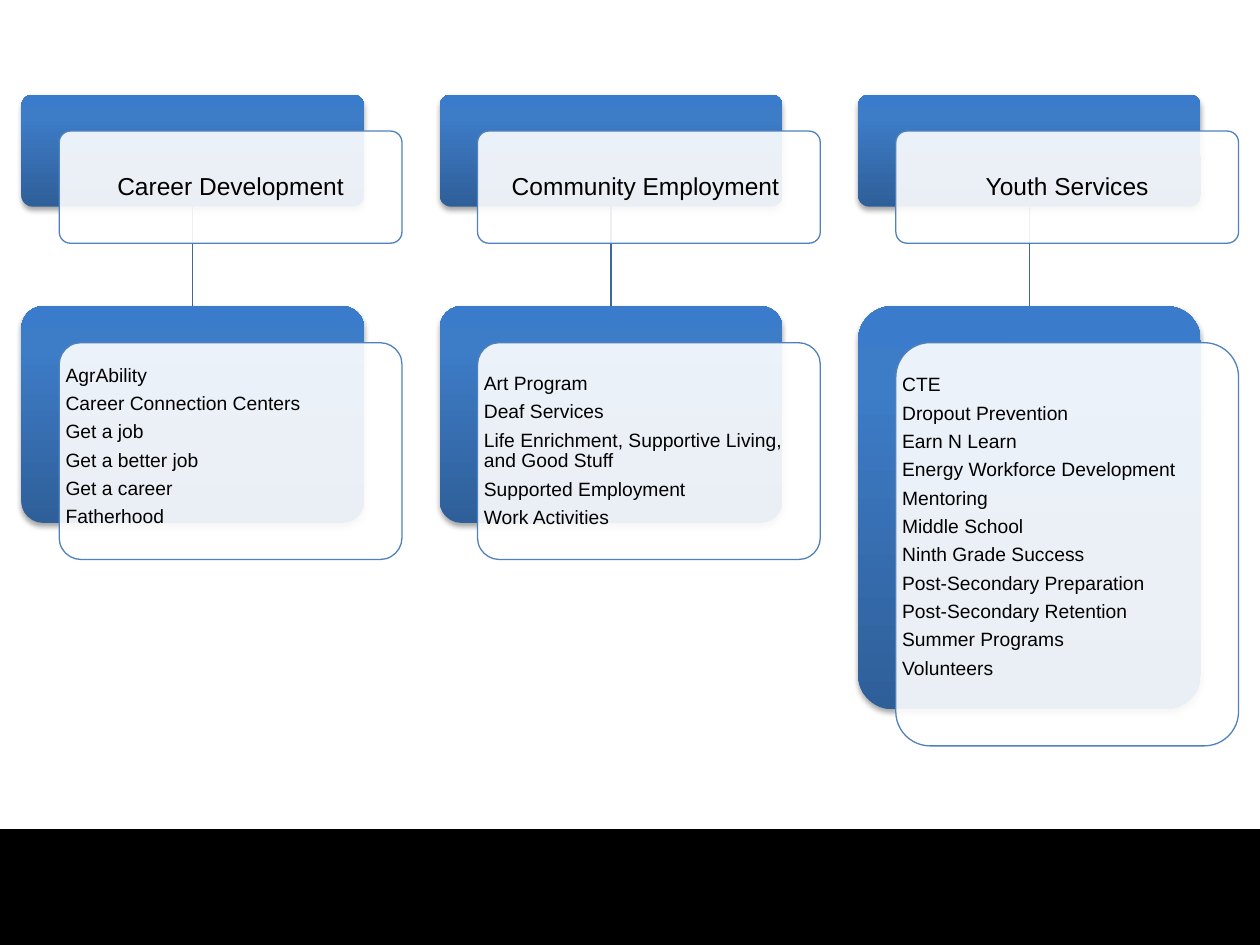
from lxml.etree import SubElement
from pptx import Presentation
from pptx.dml.color import RGBColor
from pptx.enum.shapes import MSO_CONNECTOR, MSO_SHAPE
from pptx.enum.text import MSO_ANCHOR, PP_ALIGN
from pptx.oxml import parse_xml
from pptx.oxml.ns import nsdecls, qn
from pptx.util import Inches, Pt

COLUMNS = [
    {"title": "Career Development", "height": 1.72, "lift": 0.07,
     "programs": ["AgrAbility", "Career Connection Centers", "Get a job",
                  "Get a better job", "Get a career", "Fatherhood"]},
    {"title": "Community Employment ", "height": 1.72, "lift": 0,
     "programs": ["Art Program", "Deaf Services",
                  "Life Enrichment, Supportive Living, and Good Stuff",
                  "Supported Employment", "Work Activities"]},
    {"title": "Youth Services", "height": 3.2, "lift": 0.27,
     "programs": ["CTE", "Dropout Prevention", "Earn N Learn",
                  "Energy Workforce Development", "Mentoring",
                  "Middle School", "Ninth Grade Success",
                  "Post-Secondary Preparation", "Post-Secondary Retention",
                  "Summer Programs", "Volunteers"]},
]
BLACK = RGBColor(0x00, 0x00, 0x00)
WHITE = RGBColor(0xFF, 0xFF, 0xFF)
OUTLINE = RGBColor(0x4F, 0x81, 0xBD)
LINK = RGBColor(0x3F, 0x67, 0x97)
GRADIENT = [(0, "2F5F99"), (80, "3D7CC7"), (100, "3A7CCB")]

LEFT, STEP, WIDTH = 0.17, 3.32, 2.72
TITLE_TOP, TITLE_HEIGHT, LIST_TOP = 0.75, 0.89, 2.43
SHIFT_X, SHIFT_Y = 0.3, 0.29
TITLE_STYLE = {"size": 14, "align": PP_ALIGN.CENTER, "inset": 0.06, "after": 0}
LIST_STYLE = {"size": 11, "align": PP_ALIGN.LEFT, "inset": 0.05, "after": 4.3}


def add_panel(page, kind, frame):
    panel = page.shapes.add_shape(kind, *map(Inches, frame))
    panel.shadow.inherit = False
    panel.line.fill.background()
    return panel


def add_back(page, frame):
    back = add_panel(page, MSO_SHAPE.ROUNDED_RECTANGLE, frame)
    back.adjustments[0] = 0.1
    stops = "".join(f'<a:gs pos="{place * 1000}"><a:srgbClr val="{color}"/></a:gs>'
                    for place, color in GRADIENT)
    properties = back.element.spPr
    properties.find(qn("a:prstGeom")).addnext(parse_xml(
        f'<a:gradFill {nsdecls("a")} rotWithShape="1"><a:gsLst>{stops}</a:gsLst>'
        '<a:lin ang="16200000" scaled="0"/></a:gradFill>'))
    properties.find(qn("a:effectLst")).append(parse_xml(
        f'<a:outerShdw {nsdecls("a")} blurRad="{Pt(3.1)}" dist="{Pt(1.8)}" '
        'dir="5400000" rotWithShape="0"><a:srgbClr val="000000">'
        '<a:alpha val="35000"/></a:srgbClr></a:outerShdw>'))


def add_front(page, frame):
    front = add_panel(page, MSO_SHAPE.ROUNDED_RECTANGLE, frame)
    front.adjustments[0] = 0.1
    front.fill.solid()
    front.fill.fore_color.rgb = WHITE
    color = front.element.spPr.find(qn("a:solidFill")).find(qn("a:srgbClr"))
    SubElement(color, qn("a:alpha"), val="90000")
    front.line.color.rgb = OUTLINE
    front.line.width = Pt(0.75)


def add_text(page, frame, lines, style, lift):
    text = page.shapes.add_textbox(*map(Inches, frame)).text_frame
    inset = Inches(style["inset"])
    settings = {"word_wrap": True, "vertical_anchor": MSO_ANCHOR.MIDDLE,
                "margin_left": inset, "margin_right": inset,
                "margin_top": inset, "margin_bottom": inset + Inches(lift)}
    for name, value in settings.items():
        setattr(text, name, value)
    for index, line in enumerate(lines):
        para = text.add_paragraph() if index else text.paragraphs[0]
        para.alignment = style["align"]
        para.line_spacing = 0.9
        para.space_after = Pt(style["after"])
        span = para.add_run()
        span.text = line
        span.font.name = "Arial"
        span.font.size = Pt(style["size"])
        span.font.color.rgb = BLACK


def add_card(page, left, top, height, lines, style, lift=0):
    front = (left + SHIFT_X, top + SHIFT_Y, WIDTH, height)
    add_back(page, (left, top, WIDTH, height))
    add_front(page, front)
    add_text(page, front, lines, style, lift)


def add_link(page, left):
    center = Inches(left + WIDTH / 2)
    link = page.shapes.add_connector(
        MSO_CONNECTOR.STRAIGHT, center, Inches(TITLE_TOP + TITLE_HEIGHT),
        center, Inches(LIST_TOP))
    link.line.color.rgb = LINK
    link.line.width = Pt(0.75)
    SubElement(link.element.spPr, qn("a:effectLst"))


def main():
    deck = Presentation()
    deck.slide_width, deck.slide_height = Inches(10), Inches(7.5)
    page = deck.slides.add_slide(deck.slide_layouts[6])
    band = add_panel(page, MSO_SHAPE.RECTANGLE, (0, 6.58, 10, 0.92))
    band.fill.solid()
    band.fill.fore_color.rgb = BLACK
    for index, column in enumerate(COLUMNS):
        left = LEFT + index * STEP
        add_link(page, left)
        add_card(page, left, TITLE_TOP, TITLE_HEIGHT, [column["title"]], TITLE_STYLE)
        add_card(page, left, LIST_TOP, column["height"], column["programs"],
                 LIST_STYLE, column["lift"])
    deck.save("out.pptx")


if __name__ == "__main__":
    main()
